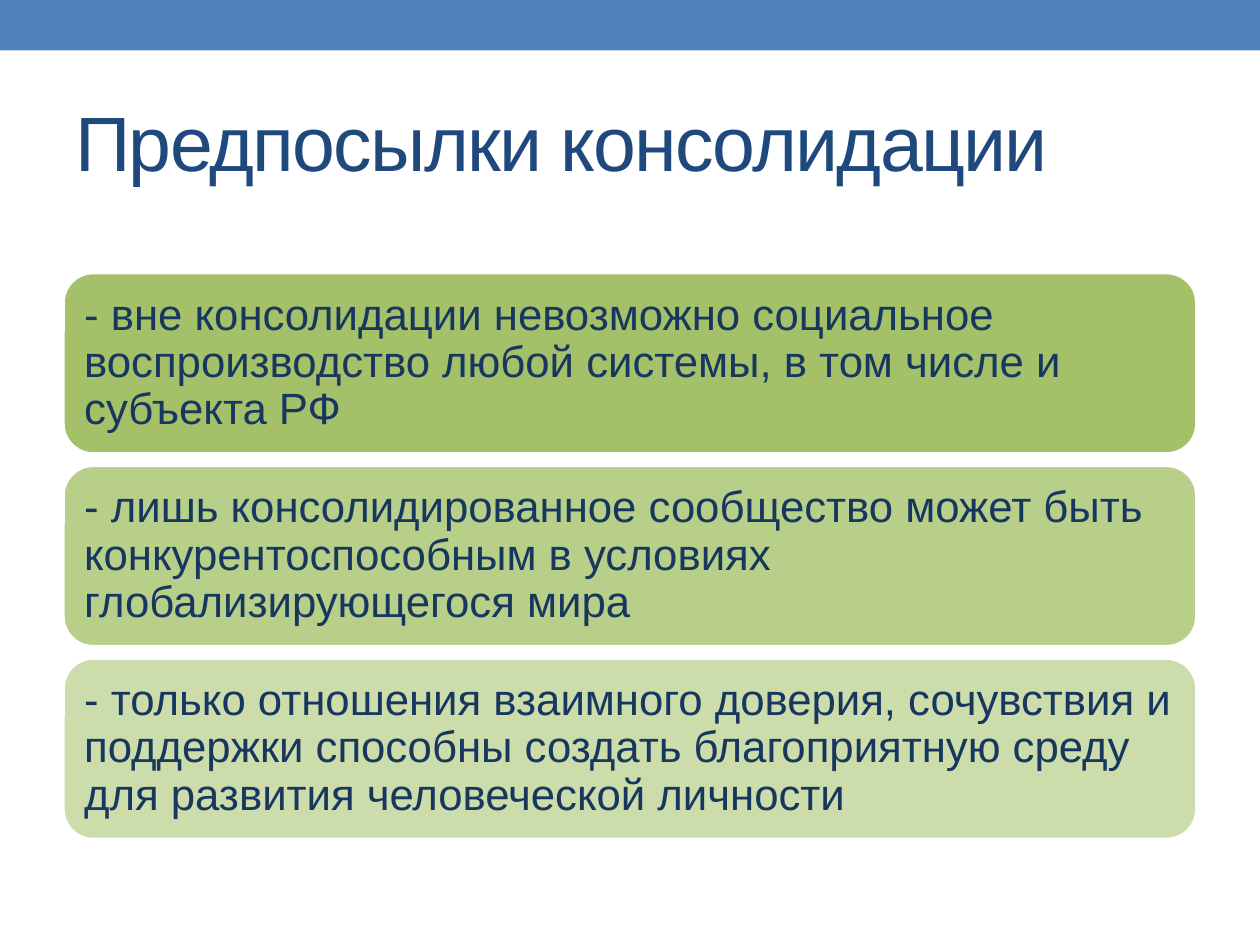
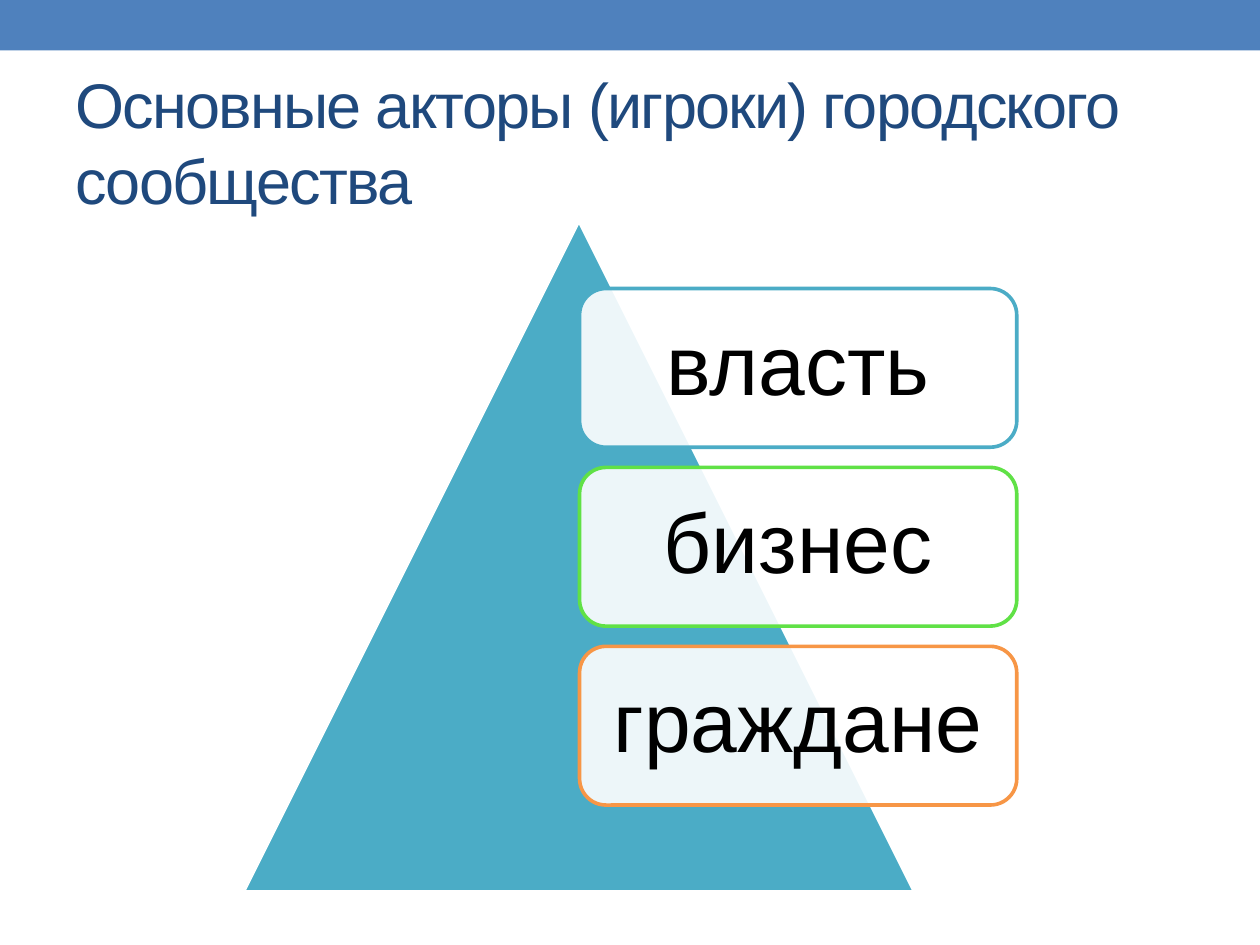
"""Build two slides on the consolidation of an urban community."""

from lxml import etree
from pptx import Presentation
from pptx.dml.color import RGBColor
from pptx.enum.shapes import MSO_SHAPE
from pptx.enum.text import MSO_ANCHOR, PP_ALIGN
from pptx.oxml.ns import qn
from pptx.util import Pt

RECTANGLE = MSO_SHAPE.RECTANGLE
ROUNDED = MSO_SHAPE.ROUNDED_RECTANGLE
TRIANGLE = MSO_SHAPE.ISOSCELES_TRIANGLE
MIDDLE = MSO_ANCHOR.MIDDLE
LEFT, CENTER = PP_ALIGN.LEFT, PP_ALIGN.CENTER

WHITE = RGBColor(0xFF, 0xFF, 0xFF)
BLACK = RGBColor(0x00, 0x00, 0x00)
BLUE = RGBColor(0x4F, 0x81, 0xBD)
NAVY = RGBColor(0x1F, 0x49, 0x7D)
DARK_NAVY = RGBColor(0x17, 0x37, 0x5E)
OLIVE = RGBColor(0x9B, 0xBB, 0x59)
TEAL = RGBColor(0x4B, 0xAC, 0xC6)
GREEN = RGBColor(0x60, 0xE1, 0x46)
ORANGE = RGBColor(0xF7, 0x96, 0x46)

FONT = "Arial"
SLIDE_WIDTH, SLIDE_HEIGHT = 720, 540
BAND_HEIGHT = 28.8
TITLE_BOX = (36, 41.76, 648, 77.76)
LINE_WIDTH = 2.08

PREMISES_TITLE = ("Предпосылки консолидации", 44)
PREMISES = [
    ("- вне консолидации невозможно социальное воспроизводство любой системы, "
     "в том числе и субъекта РФ", 90),
    ("- лишь консолидированное сообщество может быть конкурентоспособным "
     "в условиях глобализирующегося мира", 70),
    ("- только отношения взаимного доверия, сочувствия и поддержки способны "
     "создать благоприятную среду для развития человеческой личности", 50),
]
PREMISE_BOX = (36, 155.75, 648, 103.68)
PREMISE_STEP = 110.16

ACTORS_TITLE = ("Основные акторы (игроки) городского сообщества", 36)
ACTORS = [("власть", TEAL), ("бизнес", GREEN), ("граждане", ORANGE)]
PYRAMID_BOX = (138.96, 126, 383.76, 383.76)
ACTOR_BOX = (331.2, 164.88, 249.84, 90.72)
ACTOR_STEP = 102.24


def points(box):
    return [Pt(length) for length in box]


def moved_down(box, distance):
    left, top, width, height = box
    return left, top + distance, width, height


def add_filled_shape(slide, kind, box, fill, line=None, opacity=100):
    shape = slide.shapes.add_shape(kind, *points(box))
    shape.shadow.inherit = False
    shape.fill.solid()
    shape.fill.fore_color.rgb = fill
    if opacity < 100:
        color = shape._element.spPr.find(qn("a:solidFill"))[0]
        etree.SubElement(color, qn("a:alpha")).set("val", str(opacity * 1000))
    if line is None:
        shape.line.fill.background()
    else:
        shape.line.color.rgb = line
        shape.line.width = Pt(LINE_WIDTH)
    return shape


def write_text(shape, text, size, color, alignment=LEFT, margin=7.2, spacing=0.9):
    frame = shape.text_frame
    frame.text = text
    frame.word_wrap = True
    frame.vertical_anchor = MIDDLE
    frame.margin_left = frame.margin_right = Pt(margin)
    frame.margin_top = frame.margin_bottom = Pt(min(margin, 7.2))
    paragraph = frame.paragraphs[0]
    paragraph.alignment = alignment
    paragraph.line_spacing = spacing
    run = paragraph.runs[0]
    run.font.name = FONT
    run.font.size = Pt(size)
    run.font.color.rgb = color
    return run


def add_titled_slide(presentation, title, size):
    slide = presentation.slides.add_slide(presentation.slide_layouts[6])
    add_filled_shape(slide, RECTANGLE, (0, 0, SLIDE_WIDTH, BAND_HEIGHT), BLUE)
    title_box = slide.shapes.add_textbox(*points(TITLE_BOX))
    run = write_text(title_box, title, size, NAVY, spacing=1.0)
    run._r.get_or_add_rPr().set("spc", "-100")
    return slide


def add_premises_slide(presentation):
    slide = add_titled_slide(presentation, *PREMISES_TITLE)
    for index, (premise, opacity) in enumerate(PREMISES):
        box = moved_down(PREMISE_BOX, index * PREMISE_STEP)
        card = add_filled_shape(slide, ROUNDED, box, OLIVE, WHITE, opacity)
        write_text(card, premise, 25, DARK_NAVY)


def add_actors_slide(presentation):
    slide = add_titled_slide(presentation, *ACTORS_TITLE)
    add_filled_shape(slide, TRIANGLE, PYRAMID_BOX, TEAL, WHITE)
    for index, (actor, outline) in enumerate(ACTORS):
        box = moved_down(ACTOR_BOX, index * ACTOR_STEP)
        card = add_filled_shape(slide, ROUNDED, box, WHITE, outline, 90)
        write_text(card, actor, 48, BLACK, CENTER, margin=12)


def main():
    presentation = Presentation()
    presentation.slide_width = Pt(SLIDE_WIDTH)
    presentation.slide_height = Pt(SLIDE_HEIGHT)
    add_premises_slide(presentation)
    add_actors_slide(presentation)
    presentation.save("out.pptx")


if __name__ == "__main__":
    main()
